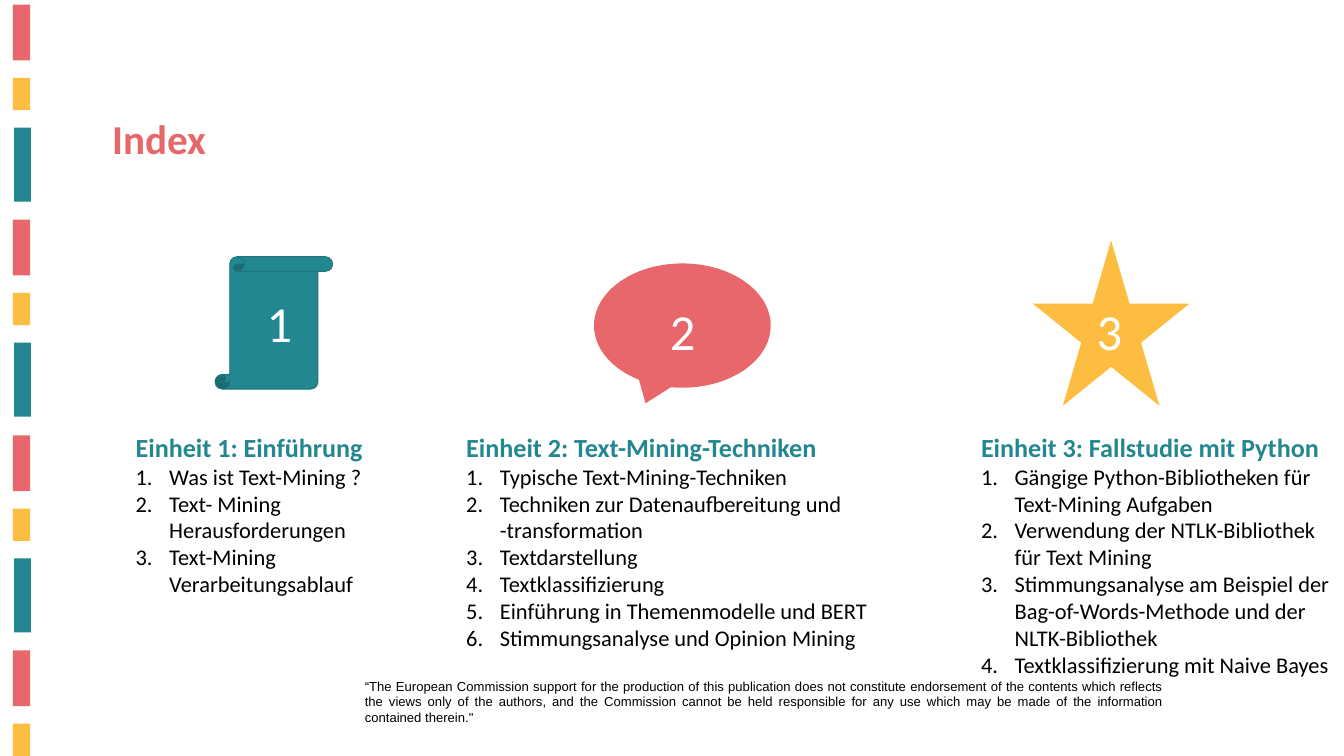
from lxml.etree import SubElement
from pptx import Presentation
from pptx.dml.color import RGBColor
from pptx.enum.shapes import MSO_SHAPE as Preset
from pptx.enum.text import MSO_AUTO_SIZE as AutoSize, PP_ALIGN as Align
from pptx.oxml.ns import qn
from pptx.util import Emu, Pt

SCALE = 9144
WIDTH, HEIGHT = 2000, 1125

TEAL = RGBColor(0x23, 0x87, 0x91)
DARK_TEAL = RGBColor(0x1E, 0x73, 0x7C)
CORAL = RGBColor(0xE8, 0x67, 0x6A)
TITLE_CORAL = RGBColor(0xE7, 0x68, 0x6A)
AMBER = RGBColor(0xFD, 0xBD, 0x40)
WHITE = RGBColor(0xFF, 0xFF, 0xFF)
BLACK = RGBColor(0, 0, 0)

STRIPE_PERIOD = 320.3
STRIPES = [
    (19, 7, 26, 83, CORAL),
    (19, 116, 26, 48, AMBER),
    (21, 190, 25, 110, TEAL),
]

ICONS = [
    (Preset.VERTICAL_SCROLL, (320, 382, 175, 197), TEAL, DARK_TEAL),
    (Preset.OVAL_CALLOUT, (884, 392, 263, 185), CORAL, None),
    (Preset.STAR_5_POINT, (1537, 358, 233, 246), AMBER, None),
]

NUMBERS = [
    ("1", (387, 430, 158, 101)),
    ("2", (987, 441, 108, 101)),
    ("3", (1622, 441, 150, 101)),
]

UNITS = [
    ((192, 637, 492, 347), "Einheit 1: Einführung", [
        "Was ist Text-Mining ?",
        "Text- Mining Herausforderungen",
        "Text-Mining Verarbeitungsablauf",
    ]),
    ((684, 637, 677, 380), "Einheit 2: Text-Mining-Techniken", [
        "Typische Text-Mining-Techniken",
        "Techniken zur Datenaufbereitung und -transformation",
        "Textdarstellung",
        "Textklassifizierung",
        "Einführung in Themenmodelle und BERT",
        "Stimmungsanalyse und Opinion Mining",
    ]),
    ((1450, 637, 538, 421), "Einheit 3: Fallstudie mit Python", [
        "Gängige Python-Bibliotheken für Text-Mining Aufgaben",
        "Verwendung der NTLK-Bibliothek für Text Mining",
        "Stimmungsanalyse am Beispiel der Bag-of-Words-Methode und der NLTK-Bibliothek",
        "Textklassifizierung mit Naive Bayes",
    ]),
]

DISCLAIMER = (
    "“The European Commission support for the production of this publication "
    "does not constitute endorsement of the contents which reflects the views "
    "only of the authors, and the Commission cannot be held responsible for any "
    "use which may be made of the information contained therein.\""
)


def px(value):
    return Emu(value * SCALE)


def add_preset(slide, preset, box, fill, line=None):
    shape = slide.shapes.add_shape(preset, *map(px, box))
    shape.shadow.inherit = False
    shape.fill.solid()
    shape.fill.fore_color.rgb = fill
    if line is None:
        shape.line.fill.background()
    else:
        shape.line.color.rgb = line
        shape.line.width = Pt(1)


def add_stripes(slide):
    for left, top, width, height, color in STRIPES:
        for index in range(4):
            stripe_top = top + round(index * STRIPE_PERIOD)
            if stripe_top < HEIGHT:
                add_preset(slide, Preset.RECTANGLE, (left, stripe_top, width, height), color)


def add_run(paragraph, text, size, color, bold=False, font="Calibri"):
    run = paragraph.add_run()
    run.text = text
    run.font.name = font
    run.font.size = Pt(size)
    run.font.bold = bold
    run.font.color.rgb = color


def add_text(slide, box, text, size, color, bold=False, font="Calibri", align=Align.LEFT):
    frame = slide.shapes.add_textbox(*map(px, box)).text_frame
    frame.word_wrap = True
    frame.auto_size = AutoSize.SHAPE_TO_FIT_TEXT
    frame.paragraphs[0].alignment = align
    add_run(frame.paragraphs[0], text, size, color, bold, font)
    return frame


def number_paragraph(paragraph):
    properties = paragraph._p.get_or_add_pPr()
    properties.set("marL", str(px(50)))
    properties.set("indent", str(px(-50)))
    bullet_color = SubElement(properties, qn("a:buClr"))
    SubElement(bullet_color, qn("a:srgbClr"), val=str(BLACK))
    SubElement(properties, qn("a:buAutoNum"), type="arabicPeriod")


def add_unit(slide, box, heading, items):
    frame = add_text(slide, box, heading, 28, TEAL, bold=True)
    for item in items:
        paragraph = frame.add_paragraph()
        number_paragraph(paragraph)
        add_run(paragraph, item, 24, BLACK)


def main():
    presentation = Presentation()
    presentation.slide_width = px(WIDTH)
    presentation.slide_height = px(HEIGHT)
    slide = presentation.slides.add_slide(presentation.slide_layouts[6])

    add_stripes(slide)
    add_text(slide, (533, 1004, 1208, 81), DISCLAIMER, 14, BLACK, font="Arial", align=Align.JUSTIFY)
    add_text(slide, (157, 164, 677, 84), "Index", 44, TITLE_CORAL, bold=True)
    for icon in ICONS:
        add_preset(slide, *icon)
    for unit in UNITS:
        add_unit(slide, *unit)
    for number, box in NUMBERS:
        add_text(slide, box, number, 54, WHITE)

    presentation.save("out.pptx")


if __name__ == "__main__":
    main()
